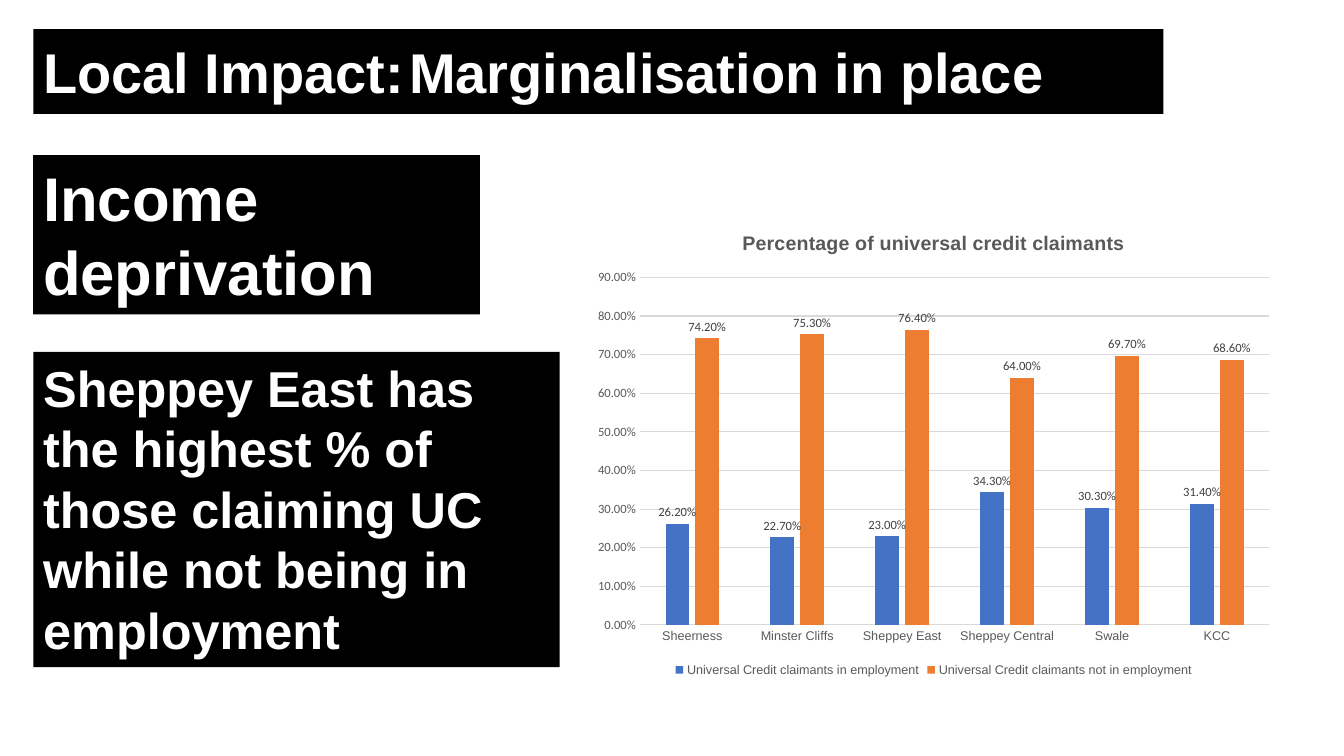
from dataclasses import dataclass

from lxml import etree
from pptx import Presentation
from pptx.chart.chart import Chart
from pptx.chart.data import CategoryChartData
from pptx.dml.color import RGBColor
from pptx.enum.chart import XL_CHART_TYPE, XL_LABEL_POSITION, XL_LEGEND_POSITION, XL_TICK_MARK
from pptx.enum.shapes import MSO_SHAPE
from pptx.enum.text import MSO_ANCHOR, MSO_AUTO_SIZE, PP_ALIGN
from pptx.oxml.ns import qn
from pptx.shapes.autoshape import Shape
from pptx.slide import Slide
from pptx.text.text import Font
from pptx.util import Inches, Pt

BLACK = RGBColor(0x00, 0x00, 0x00)
WHITE = RGBColor(0xFF, 0xFF, 0xFF)
BLUE = RGBColor(0x44, 0x72, 0xC4)
ORANGE = RGBColor(0xED, 0x7D, 0x31)
LABEL_GREY = RGBColor(0x40, 0x40, 0x40)
AXIS_GREY = RGBColor(0x59, 0x59, 0x59)
GRID_GREY = RGBColor(0xD9, 0xD9, 0xD9)

COLUMNS = XL_CHART_TYPE.COLUMN_CLUSTERED
OUTSIDE_END = XL_LABEL_POSITION.OUTSIDE_END
BOTTOM = XL_LEGEND_POSITION.BOTTOM
NO_TICK = XL_TICK_MARK.NONE
RECTANGLE = MSO_SHAPE.RECTANGLE
TOP, MIDDLE = MSO_ANCHOR.TOP, MSO_ANCHOR.MIDDLE
NO_FIT = MSO_AUTO_SIZE.NONE
LEFT = PP_ALIGN.LEFT

PERCENT = "0.00%"
MARGIN = 0.33


@dataclass(frozen=True)
class Panel:
    text: str
    left: float
    top: float
    width: float
    height: float
    size: int
    anchor: MSO_ANCHOR = TOP


@dataclass(frozen=True)
class Claimants:
    name: str
    shares: tuple[float, ...]
    color: RGBColor


TITLE = Panel("Local Impact:", MARGIN, 0.29, 3.84, 0.84, 40, MIDDLE)
PANELS = (
    Panel("Income deprivation", MARGIN, 1.54, 4.43, 1.58, 44),
    Panel(
        "Sheppey East has the highest % of those claiming UC while not being in employment",
        MARGIN, 3.49, 5.22, 3.13, 36,
    ),
    Panel("Marginalisation in place", 3.96, 0.29, 7.58, 0.84, 40, MIDDLE),
)
PLACES = ("Sheerness", "Minster Cliffs", "Sheppey East", "Sheppey Central", "Swale", "KCC")
CLAIMANTS = (
    Claimants(
        "Universal Credit claimants in employment",
        (0.262, 0.227, 0.23, 0.343, 0.303, 0.314), BLUE,
    ),
    Claimants(
        "Universal Credit claimants not in employment",
        (0.742, 0.753, 0.764, 0.64, 0.697, 0.686), ORANGE,
    ),
)
PLOT_AREA = {"x": 0.08, "y": 0.14, "w": 0.9, "h": 0.74}


def set_font(font: Font, size: float, color: RGBColor, name: str = "Arial", bold: bool = False) -> None:
    font.size = Pt(size)
    font.name = name
    font.bold = bold
    font.color.rgb = color


def write_text(box: Shape, text: str, *, size: float, color: RGBColor, anchor: MSO_ANCHOR) -> None:
    frame = box.text_frame
    frame.word_wrap = True
    frame.auto_size = NO_FIT
    frame.vertical_anchor = anchor
    para = frame.paragraphs[0]
    para.alignment = LEFT
    span = para.add_run()
    span.text = text
    set_font(span.font, size, color, bold=True)


def format_panel(box: Shape, panel: Panel) -> None:
    box.left, box.top = Inches(panel.left), Inches(panel.top)
    box.width, box.height = Inches(panel.width), Inches(panel.height)
    box.fill.solid()
    box.fill.fore_color.rgb = BLACK
    box.line.fill.background()
    write_text(box, panel.text, size=panel.size, color=WHITE, anchor=panel.anchor)


def add_panel(page: Slide, panel: Panel) -> None:
    box = page.shapes.add_shape(
        RECTANGLE, Inches(panel.left), Inches(panel.top), Inches(panel.width), Inches(panel.height)
    )
    box.shadow.inherit = False
    format_panel(box, panel)


def place_plot(chart: Chart) -> None:
    plot_area = chart.plots[0]._element.getparent()
    for old in plot_area.findall(qn("c:layout")):
        plot_area.remove(old)
    layout = etree.Element(qn("c:layout"))
    manual = etree.SubElement(layout, qn("c:manualLayout"))
    settings = {"layoutTarget": "inner", "xMode": "edge", "yMode": "edge", **PLOT_AREA}
    for tag, value in settings.items():
        etree.SubElement(manual, qn(f"c:{tag}")).set("val", str(value))
    plot_area.insert(0, layout)


def format_axes(chart: Chart) -> None:
    places, shares = chart.category_axis, chart.value_axis
    for axis, font_name in ((places, "Arial"), (shares, "Calibri")):
        axis.major_tick_mark = axis.minor_tick_mark = NO_TICK
        set_font(axis.tick_labels.font, 9, AXIS_GREY, font_name)
    shares.minimum_scale, shares.maximum_scale, shares.major_unit = 0, 0.9, 0.1
    shares.tick_labels.number_format = PERCENT
    shares.tick_labels.number_format_is_linked = False
    shares.format.line.fill.background()
    shares.has_major_gridlines = True
    for line in (places.format.line, shares.major_gridlines.format.line):
        line.color.rgb = GRID_GREY
        line.width = Pt(0.75)


def add_claimant_chart(page: Slide) -> None:
    data = CategoryChartData(number_format=PERCENT)
    data.categories = PLACES
    for group in CLAIMANTS:
        data.add_series(group.name, group.shares)
    chart = page.shapes.add_chart(
        COLUMNS, Inches(5.79), Inches(2.1), Inches(6.94), Inches(4.66), data
    ).chart
    set_font(chart.font, 10, BLACK, "Calibri")
    chart.has_title = True
    para = chart.chart_title.text_frame.paragraphs[0]
    span = para.add_run()
    span.text = "Percentage of universal credit claimants"
    set_font(span.font, 14, AXIS_GREY, bold=True)
    chart.has_legend = True
    chart.legend.position = BOTTOM
    chart.legend.include_in_layout = False
    set_font(chart.legend.font, 9, AXIS_GREY)
    format_axes(chart)

    plot = chart.plots[0]
    plot.vary_by_categories = False
    plot.gap_width, plot.overlap = 219, -27
    for group, series in zip(CLAIMANTS, plot.series):
        series.format.fill.solid()
        series.format.fill.fore_color.rgb = group.color
        labels = series.data_labels
        labels.show_value = True
        labels.position = OUTSIDE_END
        labels.number_format = PERCENT
        labels.number_format_is_linked = False
        set_font(labels.font, 9, LABEL_GREY, "Calibri")
    place_plot(chart)


def main() -> None:
    deck = Presentation()
    deck.slide_width, deck.slide_height = Inches(13.33), Inches(7.5)
    page = deck.slides.add_slide(deck.slide_layouts[5])
    format_panel(page.shapes.title, TITLE)
    for panel in PANELS:
        add_panel(page, panel)
    add_claimant_chart(page)
    deck.save("out.pptx")


if __name__ == "__main__":
    main()
